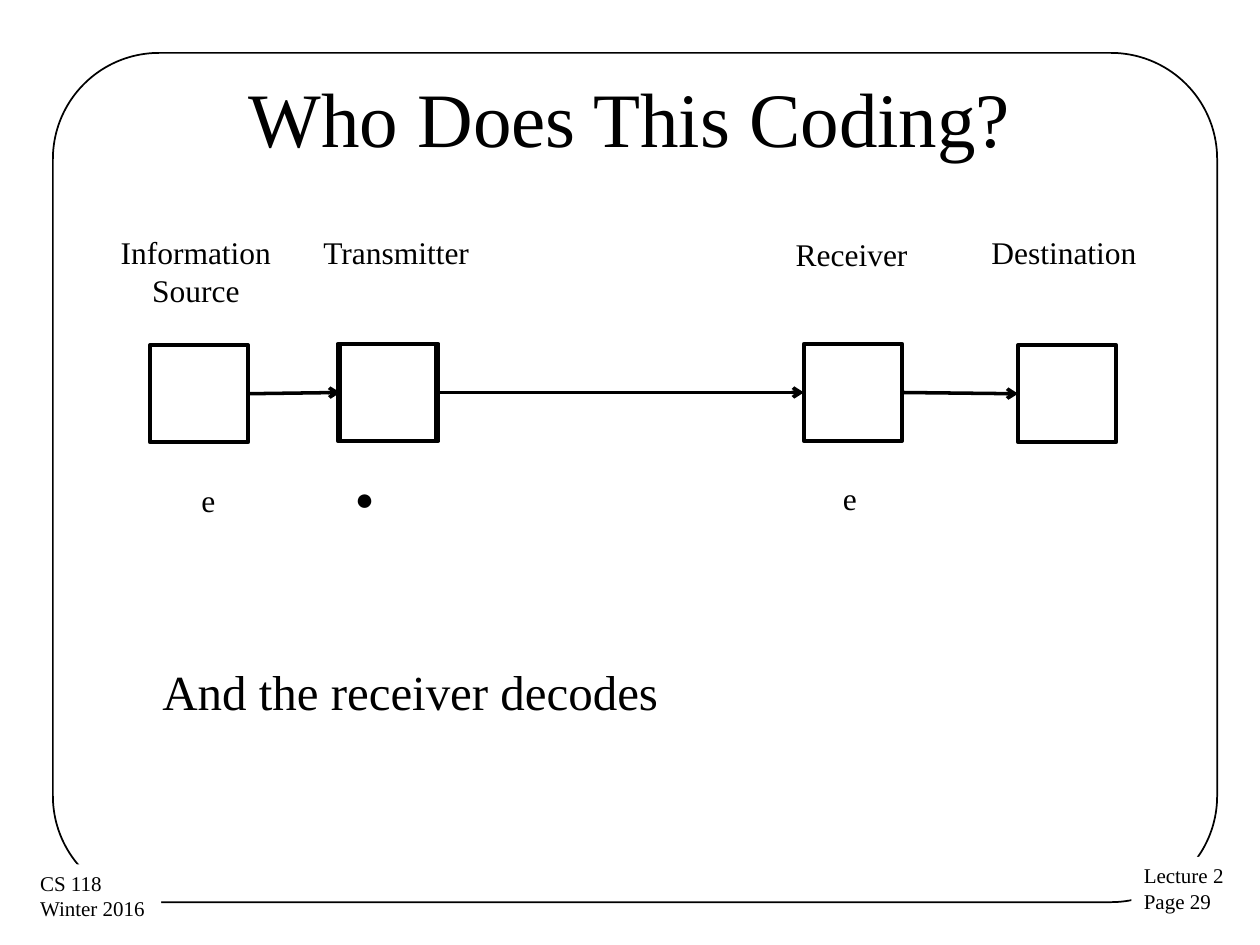
from lxml import etree
from pptx import Presentation, util as u
from pptx.dml.color import RGBColor
from pptx.enum import shapes, text
from pptx.oxml.ns import qn

COLORS = {"ink": "000000", "paper": "FFFFFF"}
RGB = {name: RGBColor.from_string(value) for name, value in COLORS.items()}
SERIF = "Times New Roman"
LEFT, CENTER = text.PP_ALIGN.LEFT, text.PP_ALIGN.CENTER

presentation = Presentation()
presentation.slide_width, presentation.slide_height = u.Inches(10), u.Inches(7.5)
column = presentation.slide_width / 100
row = presentation.slide_height / 75
slide = presentation.slides.add_slide(presentation.slide_layouts[6])


def add_box(left, top, width, height, line=None, fill=None, kind=shapes.MSO_SHAPE.RECTANGLE):
    shape = slide.shapes.add_shape(kind, int(left * column), int(top * row),
                                   int(width * column), int(height * row))
    shape.shadow.inherit = False
    if fill:
        shape.fill.solid()
        shape.fill.fore_color.rgb = RGB[fill]
    else:
        shape.fill.background()
    if line:
        shape.line.color.rgb = RGB["ink"]
        shape.line.width = u.Pt(line)
    else:
        shape.line.fill.background()
    return shape


def write(shape, lines, size, align=LEFT, font=SERIF, anchor=text.MSO_ANCHOR.TOP):
    frame = shape.text_frame
    frame.word_wrap = False
    frame.vertical_anchor = anchor
    frame.text = lines
    for paragraph in frame.paragraphs:
        paragraph.alignment = align
        for name, value in {"name": font, "size": u.Pt(size)}.items():
            setattr(paragraph.runs[0].font, name, value)
        paragraph.runs[0].font.color.rgb = RGB["ink"]


frame_shape = add_box(4.2, 4.2, 92.4, 67.4, line=1, kind=shapes.MSO_SHAPE.ROUNDED_RECTANGLE)
frame_shape.adjustments[0] = 0.125

for lines, left, top, width in [("Lecture 2\nPage 29", 89.8, 68, 8.4),
                                ("CS 118\nWinter 2016", 2.2, 68.6, 10.6)]:
    write(add_box(left, top, width, 5.1, fill="paper"), lines, 12)

stations = {}
for name, left, top, fill in [("source", 11.9, 27.4, None),
                              ("transmitter", 27, 27.3, "paper"),
                              ("transmitter edge", 26.8, 27.3, None),
                              ("receiver", 63.8, 27.3, None),
                              ("destination", 80.8, 27.4, None)]:
    stations[name] = add_box(left, top, 7.8, 7.7, line=2.25, fill=fill)

for start, end in [("source", "transmitter"), ("transmitter", "receiver"),
                   ("receiver", "destination")]:
    arrow = slide.shapes.add_connector(shapes.MSO_CONNECTOR.STRAIGHT, 0, 0, 0, 0)
    arrow.begin_connect(stations[start], 3)
    arrow.end_connect(stations[end], 1)
    arrow.line.color.rgb = RGB["ink"]
    arrow.line.width = u.Pt(2)
    etree.SubElement(arrow.line._get_or_add_ln(), qn("a:tailEnd"), type="arrow")
    etree.SubElement(arrow._element.spPr, qn("a:effectLst"))

for lines, left, top, width, height, size, align, font in [
        ("Who Does This Coding?", 5, 3, 90, 12.5, 44, CENTER, SERIF),
        ("Information\nSource", 8.5, 18, 14.1, 7.1, 18, CENTER, SERIF),
        ("Transmitter", 24.6, 18, 13.7, 4, 18, CENTER, SERIF),
        ("Receiver", 62.1, 18.2, 11, 4, 18, CENTER, SERIF),
        ("Destination", 77.6, 18, 13.7, 4, 18, CENTER, SERIF),
        ("e", 15, 37.7, 3.1, 4, 18, LEFT, SERIF),
        ("●", 27.2, 37.5, 3.5, 4, 18, LEFT, "Arial"),
        ("e", 65.9, 37.5, 3.1, 4, 18, LEFT, SERIF),
        ("And the receiver decodes", 11.9, 52, 41.8, 5.7, 28, LEFT, SERIF)]:
    label = slide.shapes.add_textbox(int(left * column), int(top * row),
                                     int(width * column), int(height * row))
    anchor = text.MSO_ANCHOR.MIDDLE if size == 44 else text.MSO_ANCHOR.TOP
    write(label, lines, size, align, font, anchor)

presentation.save("out.pptx")
